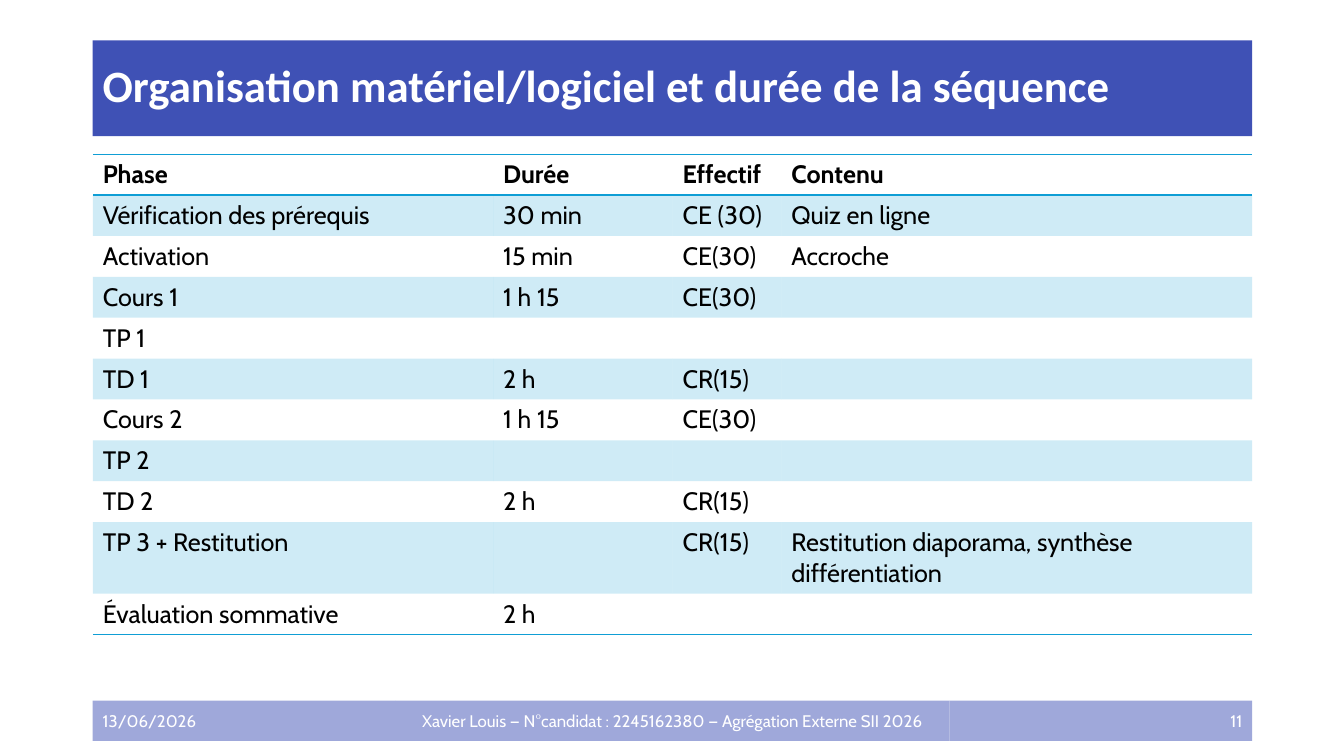
from lxml import etree
from pptx import Presentation
from pptx.dml.color import RGBColor
from pptx.enum.shapes import MSO_SHAPE
from pptx.enum.text import MSO_ANCHOR, PP_ALIGN
from pptx.oxml import parse_xml
from pptx.util import Inches, Pt

RECT = MSO_SHAPE.RECTANGLE
MIDDLE = MSO_ANCHOR.MIDDLE
LEFT, CENTER, RIGHT = PP_ALIGN.LEFT, PP_ALIGN.CENTER, PP_ALIGN.RIGHT
NS = "http://schemas.openxmlformats.org/drawingml/2006/main"
NO_STYLE = "{2D5ABB26-0587-4C30-8999-92F81FD0307C}"
ACCENT = "0F9ED5"


def rgb(value):
    return RGBColor.from_string(value)


def add_bar(x, y, w, h, fill, text, font, size, align):
    sp = s.shapes.add_shape(RECT, Inches(x), Inches(y), Inches(w), Inches(h))
    sp.shadow.inherit = False
    sp.fill.solid()
    sp.fill.fore_color.rgb = rgb(fill)
    sp.line.fill.background()
    tf = sp.text_frame
    tf.word_wrap = True
    tf.vertical_anchor = MIDDLE
    p = tf.paragraphs[0]
    p.text = text
    p.alignment = align
    p.font.name = font
    p.font.size = Pt(size)
    p.font.color.rgb = rgb("FFFFFF")
    return p


prs = Presentation()
prs.slide_width, prs.slide_height = Inches(13.33), Inches(7.5)
s = prs.slides.add_slide(prs.slide_layouts[6])

# Title band
title = add_bar(0.92, 0.4, 11.5, 0.95, "3F51B5",
                "Organisation matériel/logiciel et durée de la séquence",
                "Calibri", 32, LEFT)
title.font.bold = True
title.line_spacing = 0.9

# Schedule table
rows = [
    ("Phase", "Durée", "Effectif", "Contenu"),
    ("Vérification des prérequis", "30 min", "CE (30)", "Quiz en ligne"),
    ("Activation", "15 min", "CE(30)", "Accroche"),
    ("Cours 1", "1 h 15", "CE(30)", ""),
    ("TP 1", "", "", ""),
    ("TD 1", "2 h", "CR(15)", ""),
    ("Cours 2", "1 h 15", "CE(30)", ""),
    ("TP 2", "", "", ""),
    ("TD 2", "2 h", "CR(15)", ""),
    ("TP 3 + Restitution", "", "CR(15)",
     "Restitution diaporama, synthèse différentiation"),
    ("Évaluation sommative", "2 h", "", ""),
]
widths = [3.97, 1.78, 1.08, 4.67]
row_height = 0.405
last = len(rows) - 1
frame = s.shapes.add_table(len(rows), len(widths), Inches(0.92), Inches(1.53),
                           Inches(sum(widths)), Inches(row_height * len(rows)))
table = frame.table
table.horz_banding = False
frame._element.find(f".//{{{NS}}}tableStyleId").text = NO_STYLE
for column, width in zip(table.columns, widths):
    column.width = Inches(width)

for i, row in enumerate(rows):
    table.rows[i].height = Inches(row_height)
    sides = {0: ("lnT", "lnB"), last: ("lnB",)}.get(i, ())
    for j, text in enumerate(row):
        cell = table.cell(i, j)
        p = cell.text_frame.paragraphs[0]
        p.text = text
        p.font.name = "Cabin"
        p.font.size = Pt(18)
        p.font.bold = i == 0
        p.font.color.rgb = rgb("000000")
        # Rules above and below the header, and under the last row
        for side in sides:
            cell._tc.get_or_add_tcPr().append(parse_xml(
                f'<a:{side} xmlns:a="{NS}" w="12700"><a:solidFill>'
                f'<a:srgbClr val="{ACCENT}"/></a:solidFill></a:{side}>'))
        # Translucent band on every other row
        if i % 2:
            cell.fill.solid()
            cell.fill.fore_color.rgb = rgb(ACCENT)
            color = cell._tc.tcPr.find(f".//{{{NS}}}srgbClr")
            etree.SubElement(color, f"{{{NS}}}alpha", val="20000")
        else:
            cell.fill.background()

# Footer: date, author, slide number
footer = [
    (0.92, 3, "13/06/2026", LEFT),
    (3.92, 5.5, "Xavier Louis — N°candidat : 2245162380 — Agrégation Externe SII 2026",
     CENTER),
    (9.42, 3, "11", RIGHT),
]
for x, width, text, align in footer:
    add_bar(x, 6.95, width, 0.4, "9FA8DA", text, "Cabin", 12, align)

prs.save("out.pptx")
